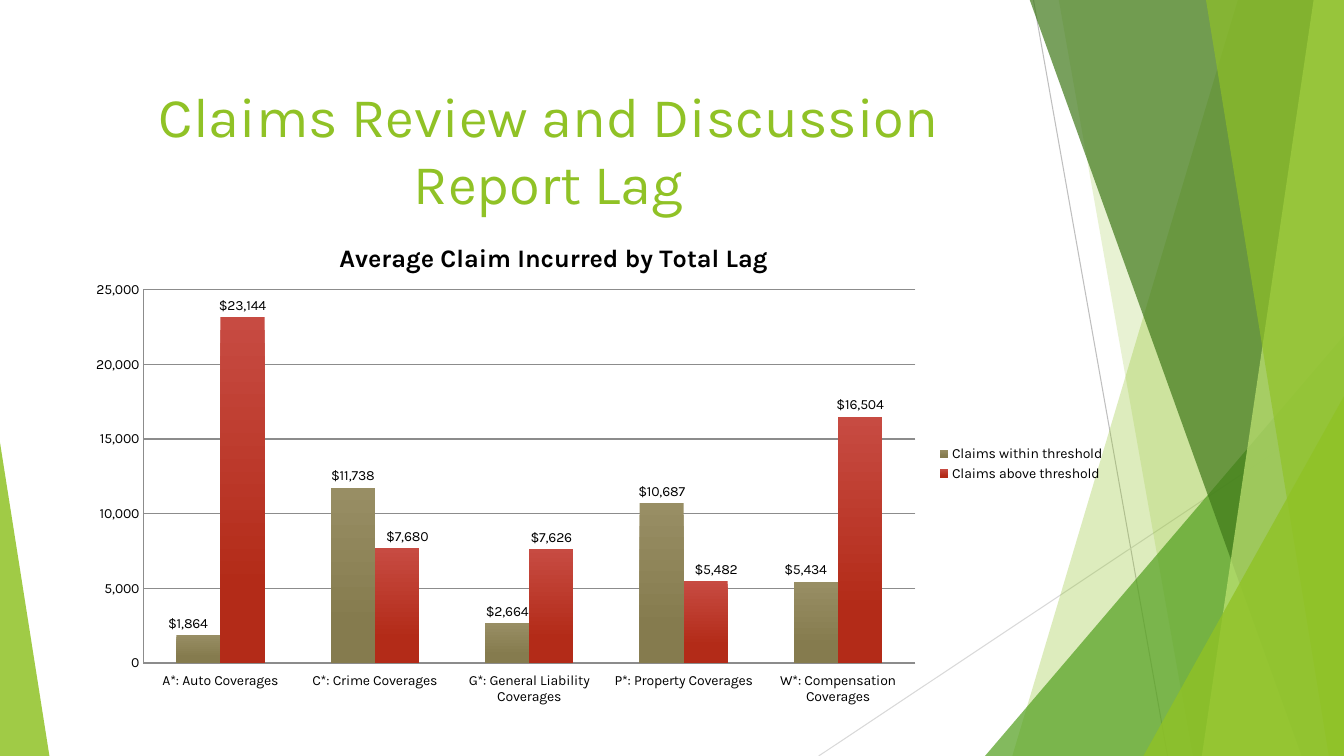
"""Build the report lag slide: a clustered column chart beside green facets."""
from typing import NamedTuple

from lxml.etree import SubElement
from pptx import Presentation
from pptx.chart.data import CategoryChartData
from pptx.dml.color import RGBColor
from pptx.enum.chart import XL_CHART_TYPE as ChartType
from pptx.enum.chart import XL_LABEL_POSITION as LabelPosition
from pptx.enum.chart import XL_LEGEND_POSITION as LegendPosition
from pptx.enum.chart import XL_TICK_LABEL_POSITION as TickLabels
from pptx.enum.chart import XL_TICK_MARK as TickMark
from pptx.enum.shapes import MSO_CONNECTOR as Connector
from pptx.enum.shapes import MSO_SHAPE as Shape
from pptx.enum.text import MSO_ANCHOR as Anchor
from pptx.enum.text import PP_ALIGN as Align
from pptx.oxml import parse_xml
from pptx.oxml.ns import nsdecls, qn
from pptx.util import Inches, Pt

FONT = "Karla"
WIDTH, HEIGHT = 13.33, 7.5
BLACK = RGBColor(0x00, 0x00, 0x00)
GRID = RGBColor(0x8C, 0x8C, 0x8C)
SILVER = RGBColor(0xBF, 0xBF, 0xBF)
PALE_GRAY = RGBColor(0xD9, 0xD9, 0xD9)
LIME = RGBColor(0x90, 0xC2, 0x26)
LEAF = RGBColor(0x54, 0xA0, 0x21)
FOREST = RGBColor(0x3F, 0x78, 0x19)
MINT = RGBColor(0xC0, 0xE4, 0x74)
KHAKI_LIGHT = RGBColor(0x98, 0x8E, 0x64)
KHAKI = RGBColor(0x85, 0x7B, 0x4E)
RED_LIGHT = RGBColor(0xC7, 0x4B, 0x42)
RED = RGBColor(0xB3, 0x2B, 0x18)


class Ray(NamedTuple):
    """A thin straight line."""
    start: tuple[float, float]
    end: tuple[float, float]
    color: RGBColor


class Band(NamedTuple):
    """A full-height facet from its left edge to the right slide edge."""
    top: float
    bottom: float
    color: RGBColor
    opacity: int


class Wedge(NamedTuple):
    """A right triangle standing on the bottom slide edge."""
    left: float
    top: float
    width: float
    apex: float
    color: RGBColor
    opacity: int


class Columns(NamedTuple):
    """A chart series with its gradient and sideways label shifts."""
    name: str
    values: tuple[int, ...]
    light: RGBColor
    dark: RGBColor
    shifts: dict[int, float]


RAYS = (
    Ray((10.25, 0), (11.58, HEIGHT), SILVER),
    Ray((WIDTH, 4.03), (8.12, HEIGHT), PALE_GRAY),
)
FACETS = (
    Band(12.28, 10.04, LIME, 30),
    Band(10.5, 11.83, LIME, 20),
    Wedge(9.77, 3.33, 3.56, 1, LEAF, 72),
    Band(10.21, 12.91, FOREST, 70),
    Band(13.03, 11.92, MINT, 70),
    Band(11.96, 13.18, LIME, 65),
    Wedge(11.34, 3.93, 1.99, 1, LIME, 80),
    Wedge(0, 4.39, 0.49, 0, LIME, 85),
)
COVERAGES = ("A*: Auto Coverages", "C*: Crime Coverages",
             "G*: General Liability Coverages", "P*: Property Coverages",
             "W*: Compensation Coverages")
SERIES = (
    Columns("Claims within threshold", (1864, 11738, 2664, 10687, 5434),
            KHAKI_LIGHT, KHAKI, {0: -0.01, 4: -0.01}),
    Columns("Claims above threshold", (23144, 7680, 7626, 5482, 16504),
            RED_LIGHT, RED, {1: 0.01, 3: 0.01}),
)


def draw_ray(page, ray: Ray) -> None:
    """Draw one hairline without a shadow."""
    line = page.shapes.add_connector(
        Connector.STRAIGHT, *map(Inches, ray.start + ray.end))
    line.line.color.rgb = ray.color
    line.line.width = Pt(0.75)
    SubElement(line._element.spPr, qn("a:effectLst"))


def draw_facet(page, facet: Band | Wedge) -> None:
    """Draw one translucent facet."""
    if isinstance(facet, Band):
        outline = page.shapes.build_freeform(
            Inches(facet.top), Inches(-0.01), scale=1.0)
        corners = ((WIDTH, -0.01), (WIDTH, HEIGHT), (facet.bottom, HEIGHT))
        outline.add_line_segments(
            [(Inches(x), Inches(y)) for x, y in corners], close=True)
        shape = outline.convert_to_shape()
    else:
        shape = page.shapes.add_shape(
            Shape.ISOSCELES_TRIANGLE, Inches(facet.left), Inches(facet.top),
            Inches(facet.width), Inches(HEIGHT - facet.top))
        shape.adjustments[0] = facet.apex
    shape.shadow.inherit = False
    shape.line.fill.background()
    shape.fill.solid()
    shape.fill.fore_color.rgb = facet.color
    color = shape._element.spPr.find(qn("a:solidFill"))[0]
    SubElement(color, qn("a:alpha"), val=str(facet.opacity * 1000))


def style_font(font, size: float, color: RGBColor, bold: bool = False) -> None:
    """Set the slide font with its size, colour and weight."""
    font.name, font.size, font.bold = FONT, Pt(size), bold
    font.color.rgb = color


def add_title(page) -> None:
    """Write the two-line slide title."""
    box = page.shapes.add_textbox(
        Inches(0.74), Inches(0.67), Inches(9.4), Inches(1.61))
    frame = box.text_frame
    frame.word_wrap = True
    frame.vertical_anchor = Anchor.MIDDLE
    para = frame.paragraphs[0]
    para.alignment = Align.CENTER
    style_font(para.font, 40, LIME)
    para.add_run().text = "Claims Review and Discussion"
    para.add_line_break()
    para.add_run().text = "Report Lag"


def manual_layout(**settings: float | str):
    """Return a chart layout element with the given settings."""
    children = "".join(
        f'<c:{name} val="{value}"/>' for name, value in settings.items())
    return parse_xml(f'<c:layout {nsdecls("c")}><c:manualLayout>{children}'
                     '</c:manualLayout></c:layout>')


def place(parent, layout, index: int) -> None:
    """Give a chart part its layout, replacing any earlier one."""
    for old in parent.findall(qn("c:layout")):
        parent.remove(old)
    parent.insert(index, layout)


def style_series(series, columns: Columns) -> None:
    """Apply the gradient and the value labels of one series."""
    fill = series.format.fill
    fill.gradient()
    fill.gradient_angle = 270
    stops = zip(fill.gradient_stops, (0, 0.78), (columns.light, columns.dark))
    for stop, position, color in stops:
        stop.position = position
        stop.color.rgb = color
    labels = series.data_labels
    labels.show_value = True
    labels.number_format = '"$"#,##0'
    labels.number_format_is_linked = False
    labels.position = LabelPosition.OUTSIDE_END
    style_font(labels.font, 10, BLACK)
    for point, shift in columns.shifts.items():
        label = series.points[point].data_label
        style_font(label.font, 10, BLACK)
        label.position = LabelPosition.OUTSIDE_END
        element = labels._element.find(f'{qn("c:dLbl")}[{len(labels._element.findall(qn("c:dLbl")))}]')
        place(element, manual_layout(x=shift, y=0), 1)
        element.insert(2, parse_xml(
            f'<c:numFmt {nsdecls("c")} formatCode="&quot;$&quot;#,##0" sourceLinked="0"/>'))


def add_lag_chart(page) -> None:
    """Add the chart of average claims by coverage."""
    data = CategoryChartData(number_format="#,##0")
    data.categories = COVERAGES
    for columns in SERIES:
        data.add_series(columns.name, columns.values)
    chart = page.shapes.add_chart(
        ChartType.COLUMN_CLUSTERED, Inches(0.74), Inches(2.1),
        Inches(10.32), Inches(5), data).chart
    style_font(chart.font, 10, BLACK)
    heading = chart.chart_title.text_frame.paragraphs[0]
    heading.text = "Average Claim Incurred by Total Lag"
    style_font(heading.font, 18, BLACK, bold=True)
    place(chart.chart_title._element, manual_layout(
        xMode="edge", yMode="edge", x=0.25, y=0.05), 1)
    place(chart._chartSpace.chart.plotArea, manual_layout(
        layoutTarget="inner", xMode="edge", yMode="edge",
        x=0.066, y=0.155, w=0.742, h=0.741), 0)
    chart.has_legend = True
    chart.legend.position = LegendPosition.RIGHT
    chart.legend.include_in_layout = False
    style_font(chart.legend.font, 10, BLACK)
    for axis in (chart.category_axis, chart.value_axis):
        axis.major_tick_mark = axis.minor_tick_mark = TickMark.NONE
        style_font(axis.tick_labels.font, 10, BLACK)
        axis.format.line.color.rgb = GRID
        axis.format.line.width = Pt(1)
    chart.category_axis.tick_label_position = TickLabels.LOW
    chart.value_axis.minimum_scale, chart.value_axis.maximum_scale = 0, 25000
    chart.value_axis.major_unit = 5000
    grid = chart.value_axis.major_gridlines.format.line
    grid.color.rgb, grid.width = GRID, Pt(1)
    plot = chart.plots[0]
    plot.gap_width, plot.overlap, plot.vary_by_categories = 150, 0, False
    for series, columns in zip(plot.series, SERIES):
        style_series(series, columns)


def main() -> None:
    """Build and save the deck."""
    deck = Presentation()
    deck.slide_width, deck.slide_height = Inches(WIDTH), Inches(HEIGHT)
    page = deck.slides.add_slide(deck.slide_layouts[6])
    for ray in RAYS:
        draw_ray(page, ray)
    for facet in FACETS:
        draw_facet(page, facet)
    add_title(page)
    add_lag_chart(page)
    deck.save("out.pptx")


if __name__ == "__main__":
    main()
